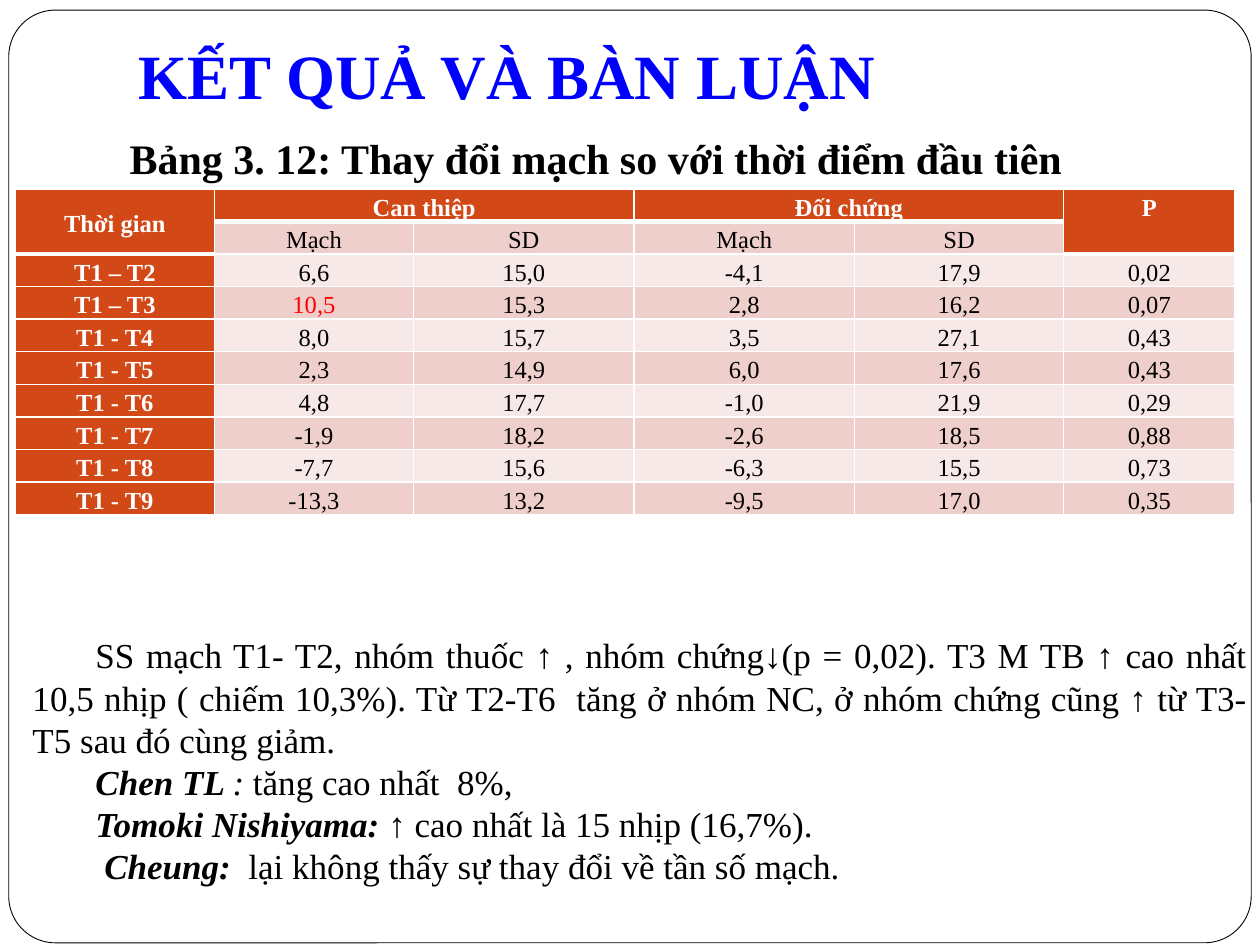
import pptx
import pptx.util
import pptx.dml.color
import pptx.enum.shapes
import pptx.enum.text
import pptx.oxml
import pptx.oxml.ns

Pt = pptx.util.Pt
RGBColor = pptx.dml.color.RGBColor
ANCHOR = pptx.enum.text.MSO_ANCHOR
ALIGN = pptx.enum.text.PP_ALIGN

FONT = "Times New Roman"
WHITE = RGBColor(0xFF, 0xFF, 0xFF)
BLACK = RGBColor(0, 0, 0)
BLUE = RGBColor(0, 0, 0xFF)
RED = RGBColor(0xFF, 0, 0)
HEADER_FILL = RGBColor(0xD3, 0x48, 0x17)
DARK_BAND = RGBColor(0xEF, 0xCF, 0xCC)
LIGHT_BAND = RGBColor(0xF7, 0xE9, 0xE8)

COLUMN_WIDTHS = [113.76, 113.76, 126, 126, 119.52, 97.92]
ROWS = [
    ["Thời gian", "Can thiệp", "", "Đối chứng", "", "P"],
    ["", "Mạch", "SD", "Mạch", "SD", ""],
    ["T1 – T2", "6,6", "15,0", "-4,1", "17,9", "0,02"],
    ["T1 – T3", "10,5", "15,3", "2,8", "16,2", "0,07"],
    ["T1 - T4", "8,0", "15,7", "3,5", "27,1", "0,43"],
    ["T1 - T5", "2,3", "14,9", "6,0", "17,6", "0,43"],
    ["T1 - T6", "4,8", "17,7", "-1,0", "21,9", "0,29"],
    ["T1 - T7", "-1,9", "18,2", "-2,6", "18,5", "0,88"],
    ["T1 - T8", "-7,7", "15,6", "-6,3", "15,5", "0,73"],
    ["T1 - T9", "-13,3", "13,2", "-9,5", "17,0", "0,35"],
]
MERGES = [((0, 0), (1, 0)), ((0, 1), (0, 2)), ((0, 3), (0, 4)), ((0, 5), (1, 5))]
HIGHLIGHT = (3, 1)

COMMENTS = [
    [("SS mạch T1- T2, nhóm thuốc ↑ , nhóm chứng↓(p = 0,02). T3 M TB ↑ cao nhất "
      "10,5 nhịp ( chiếm 10,3%). Từ T2-T6  tăng ở nhóm NC, ở nhóm chứng cũng ↑ từ "
      "T3-T5 sau đó cùng giảm.", False, False)],
    [("Chen TL ", True, True), (": ", False, True),
     ("tăng cao nhất  8%, ", False, False)],
    [("Tomoki Nishiyama: ", True, True),
     ("↑ cao nhất là 15 nhịp (16,7%).", False, False)],
    [(" ", True, False), ("Cheung:  ", True, True),
     ("lại không thấy sự thay đổi về tần số mạch.", False, False)],
]


def add_run(paragraph, text, size, color, bold=False, italic=False):
    run = paragraph.add_run()
    run.text = text
    run.font.name = FONT
    run.font.size = Pt(size)
    run.font.color.rgb = color
    run.font.bold = bold
    run.font.italic = italic


def add_frame(slide, left, top, width, height):
    shape = slide.shapes.add_shape(
        pptx.enum.shapes.MSO_SHAPE.ROUNDED_RECTANGLE,
        Pt(left), Pt(top), Pt(width), Pt(height))
    shape.adjustments[0] = 0.05
    shape.shadow.inherit = False
    shape.fill.solid()
    shape.fill.fore_color.rgb = WHITE
    shape.line.color.rgb = BLACK
    shape.line.width = Pt(0.5)
    slide.shapes._spTree.insert(2, shape._element)


def place_title(slide, left, top, width, height):
    title = slide.shapes.title
    title.left, title.top = Pt(left), Pt(top)
    title.width, title.height = Pt(width), Pt(height)
    frame = title.text_frame
    frame.auto_size = pptx.enum.text.MSO_AUTO_SIZE.NONE
    frame.vertical_anchor = ANCHOR.BOTTOM
    frame.margin_bottom = Pt(7.2)
    paragraph = frame.paragraphs[0]
    paragraph.alignment = ALIGN.LEFT
    add_run(paragraph, "KẾT QUẢ VÀ BÀN LUẬN", 36, BLUE, bold=True)


def add_text(slide, left, top, width, height, paragraphs, size, anchor):
    frame = slide.shapes.add_textbox(
        Pt(left), Pt(top), Pt(width), Pt(height)).text_frame
    frame.word_wrap = True
    frame.vertical_anchor = anchor
    for index, runs in enumerate(paragraphs):
        paragraph = frame.add_paragraph() if index else frame.paragraphs[0]
        paragraph.alignment = ALIGN.JUSTIFY
        properties = paragraph._p.get_or_add_pPr()
        properties.set("marL", "0")
        properties.set("indent", str(Pt(36)))
        for text, bold, italic in runs:
            add_run(paragraph, text, size, BLACK, bold, italic)


def add_borders(cell, top, bottom):
    properties = cell._tc.get_or_add_tcPr()
    for side, width in (("L", 1), ("R", 1), ("T", top), ("B", bottom)):
        properties.append(pptx.oxml.parse_xml(
            f'<a:ln{side} {pptx.oxml.ns.nsdecls("a")} w="{Pt(width)}">'
            f'<a:solidFill><a:srgbClr val="{WHITE}"/></a:solidFill></a:ln{side}>'))


def header_depth(column):
    return 2 if column in (0, len(COLUMN_WIDTHS) - 1) else 1


def format_cell(cell, row, column, text):
    depth = header_depth(column)
    is_header = row < depth or column == 0
    cell.margin_left = cell.margin_right = Pt(5)
    cell.margin_top = cell.margin_bottom = Pt(0)
    is_last_column = column == len(COLUMN_WIDTHS) - 1
    cell.vertical_anchor = ANCHOR.TOP if is_last_column else ANCHOR.MIDDLE
    add_borders(cell, 3 if row == depth else 1, 3 if row < depth else 1)
    band = DARK_BAND if row % 2 else LIGHT_BAND
    cell.fill.solid()
    cell.fill.fore_color.rgb = HEADER_FILL if is_header else band
    if text:
        paragraph = cell.text_frame.paragraphs[0]
        paragraph.alignment = ALIGN.CENTER
        paragraph.line_spacing = 1.2
        body_color = RED if (row, column) == HIGHLIGHT else BLACK
        add_run(paragraph, text, 14, WHITE if is_header else body_color, is_header)


def add_pulse_table(slide, left, top, width, height):
    table = slide.shapes.add_table(
        len(ROWS), len(COLUMN_WIDTHS),
        Pt(left), Pt(top), Pt(width), Pt(height)).table
    for column, column_width in zip(table.columns, COLUMN_WIDTHS):
        column.width = Pt(column_width * width / sum(COLUMN_WIDTHS))
    for row in table.rows:
        row.height = Pt(height / len(ROWS))
    for first, last in MERGES:
        table.cell(*first).merge(table.cell(*last))
    for row, texts in enumerate(ROWS):
        for column, text in enumerate(texts):
            format_cell(table.cell(row, column), row, column, text)


def build_slide(presentation):
    slide = presentation.slides.add_slide(presentation.slide_layouts[5])
    add_frame(slide, 5, 5.75, 710, 533)
    place_title(slide, 72, 21.6, 612, 49.7)
    add_pulse_table(slide, 8.8, 108, 697, 185.7)
    add_text(slide, 11.5, 358, 708.5, 152.6, COMMENTS, 20, ANCHOR.MIDDLE)
    caption = [[("Bảng 3. 12: Thay đổi mạch so với thời điểm đầu tiên", True, False)]]
    add_text(slide, 31, 72, 641, 36, caption, 24, ANCHOR.TOP)


def main():
    presentation = pptx.Presentation()
    presentation.slide_width = Pt(720)
    presentation.slide_height = Pt(540)
    build_slide(presentation)
    presentation.save("out.pptx")


if __name__ == "__main__":
    main()
